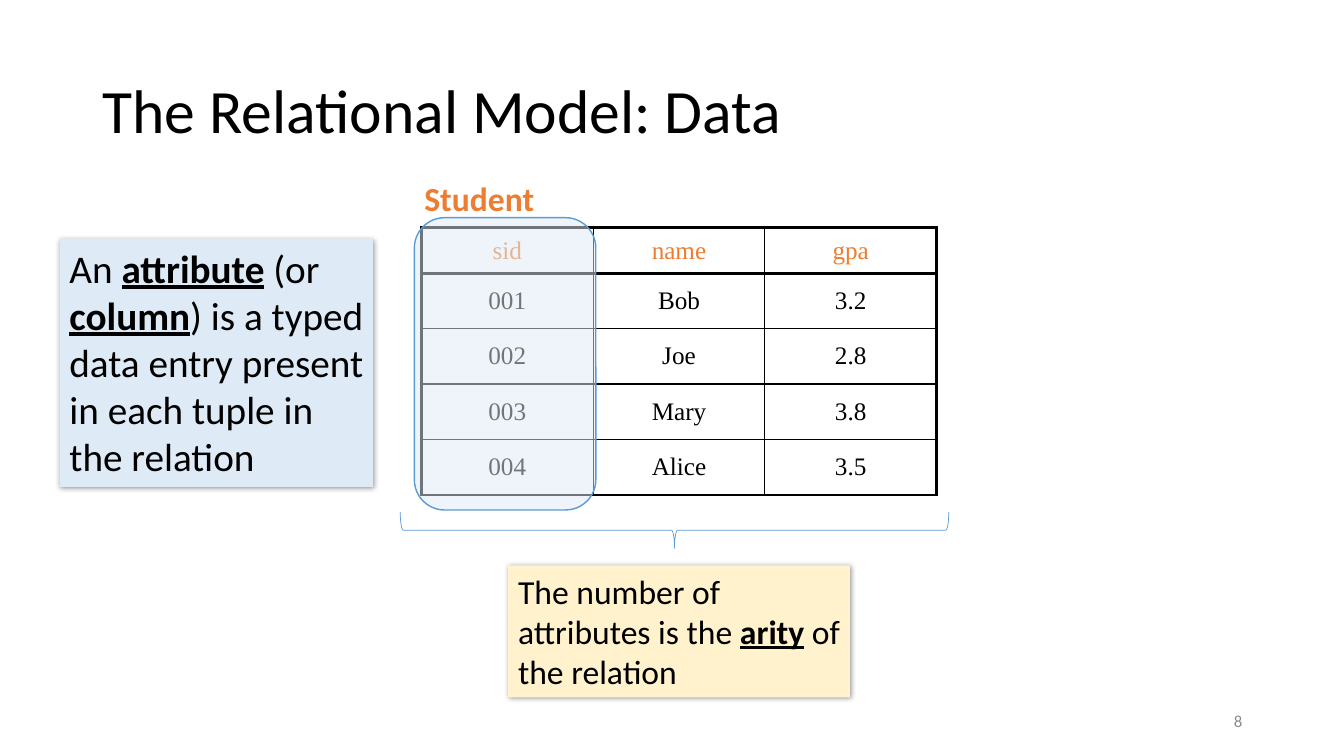
import pptx
import pptx.util
import pptx.dml.color
import pptx.enum.shapes
import pptx.enum.text
import pptx.oxml
import pptx.oxml.ns
import lxml.etree

Inches = pptx.util.Inches
Pt = pptx.util.Pt
RGBColor = pptx.dml.color.RGBColor
Align = pptx.enum.text.PP_ALIGN
Anchor = pptx.enum.text.MSO_ANCHOR
Kind = pptx.enum.shapes.MSO_SHAPE
qn = pptx.oxml.ns.qn

BLACK = RGBColor(0x00, 0x00, 0x00)
GRAY = RGBColor(0x8C, 0x8C, 0x8C)
ORANGE = RGBColor(0xED, 0x7D, 0x31)
BLUE = RGBColor(0x5B, 0x9B, 0xD5)
PALE = RGBColor(0xDE, 0xEB, 0xF7)
CREAM = RGBColor(0xFF, 0xF2, 0xCC)

TITLE = "The Relational Model: Data"
NAME = "Student"
PAGE = "8"
ROWS = [
    ("sid", "name", "gpa"),
    ("001", "Bob", "3.2"),
    ("002", "Joe", "2.8"),
    ("003", "Mary", "3.8"),
    ("004", "Alice", "3.5"),
]
NOTES = [
    ((0.59, 2.37, 3.11, 2.46), PALE, 28,
     ["An ", "attribute", " (or ", "column",
      ") is a typed data entry present in each tuple in the relation"]),
    ((5.04, 5.61, 3.39, 1.31), CREAM, 24,
     ["The number of attributes is the ", "arity", " of the relation"]),
]
LEFT, TOP, WIDTH = 4.18, 2.26, 5.11
HEAD, BODY = 0.45, 0.55
THICK, THIN = 2.25, 1


def style(para, size, color, face="Calibri"):
    para.font.size = Pt(size)
    para.font.name = face
    para.font.color.rgb = color


def label(box, text, size, color, anchor=Anchor.TOP, wrap=True):
    frame = slide.shapes.add_textbox(*map(Inches, box)).text_frame
    frame.word_wrap = wrap
    frame.vertical_anchor = anchor
    para = frame.paragraphs[0]
    para.text = text
    style(para, size, color)
    return para


def shape(kind, box):
    item = slide.shapes.add_shape(kind, *map(Inches, box))
    item.shadow.inherit = False
    return item


def note(box, color, size, parts):
    item = shape(Kind.RECTANGLE, box)
    item.fill.solid()
    item.fill.fore_color.rgb = color
    item.line.fill.background()
    shade = lxml.etree.SubElement(
        item.element.spPr.find(qn("a:effectLst")), qn("a:outerShdw"),
        blurRad=str(Pt(4)), dist=str(Pt(1)), dir=str(45 * 60000))
    tint = lxml.etree.SubElement(shade, qn("a:srgbClr"), val=str(BLACK))
    lxml.etree.SubElement(tint, qn("a:alpha"), val="40000")
    frame = item.text_frame
    frame.word_wrap = True
    frame.vertical_anchor = Anchor.TOP
    para = frame.paragraphs[0]
    para.alignment = Align.LEFT
    style(para, size, BLACK)
    for i, text in enumerate(parts):
        run = para.add_run()
        run.text = text
        if i % 2:
            run.font.bold = run.font.underline = True


def border(cell, widths):
    props = cell._tc.get_or_add_tcPr()
    for side, width in zip("LRTB", widths):
        line = lxml.etree.SubElement(props, qn("a:ln" + side), w=str(Pt(width)))
        fill = lxml.etree.SubElement(line, qn("a:solidFill"))
        lxml.etree.SubElement(fill, qn("a:srgbClr"), val=str(BLACK))


def grid():
    count, span = len(ROWS), len(ROWS[0])
    high = HEAD + BODY * (count - 1)
    table = slide.shapes.add_table(
        count, span, *map(Inches, (LEFT, TOP, WIDTH, high))).table
    table.first_row = table.horz_banding = False
    for col in table.columns:
        col.width = Inches(WIDTH / span)
    for r, row in enumerate(ROWS):
        table.rows[r].height = Inches(BODY if r else HEAD)
        for c, text in enumerate(row):
            cell = table.cell(r, c)
            edges = (c == 0, c == span - 1, r < 2, r in (0, count - 1))
            border(cell, [THICK if edge else THIN for edge in edges])
            cell.fill.background()
            cell.vertical_anchor = Anchor.MIDDLE
            para = cell.text_frame.paragraphs[0]
            para.text = text
            para.alignment = Align.CENTER
            para.space_before = Pt(3.6)
            style(para, 18, BLACK if r else ORANGE, "Times New Roman")


deck = pptx.Presentation()
deck.slide_width, deck.slide_height = Inches(13.33), Inches(7.5)
slide = deck.slides.add_slide(deck.slide_layouts[6])

label((9.42, 6.95, 3, 0.4), PAGE, 12, GRAY, Anchor.MIDDLE).alignment = Align.RIGHT
label((0.92, 0.4, 11.5, 1.45), TITLE, 44, BLACK, Anchor.MIDDLE).line_spacing = 0.9
grid()
label((4.11, 1.72, 1.31, 0.5), NAME, 24, ORANGE, wrap=False).font.bold = True
for item in NOTES:
    note(*item)

frame = shape(Kind.ROUNDED_RECTANGLE, (4.11, 2.16, 1.8, 2.9))
frame.fill.solid()
frame.fill.fore_color.rgb = PALE
tint = frame.element.spPr.find(qn("a:solidFill"))[0]
lxml.etree.SubElement(tint, qn("a:alpha"), val="50000")
frame.line.color.rgb = BLUE
frame.line.width = Pt(1)

brace = shape(Kind.LEFT_BRACE, (6.51, 2.54, 0.36, 5.44))
brace.rotation = 270
brace.fill.background()
brace.line.color.rgb = BLUE
brace.line.width = Pt(0.5)

deck.save("out.pptx")
